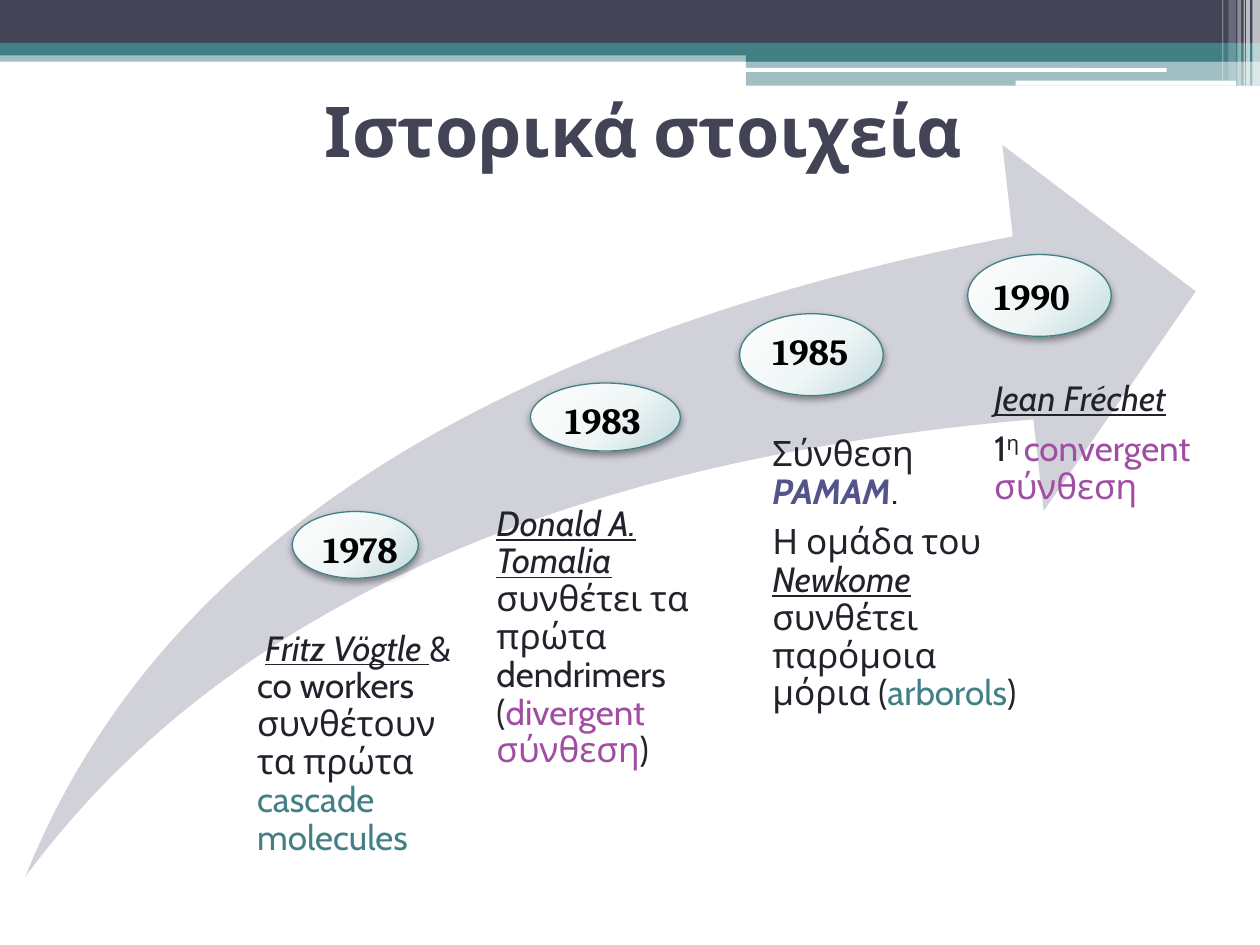
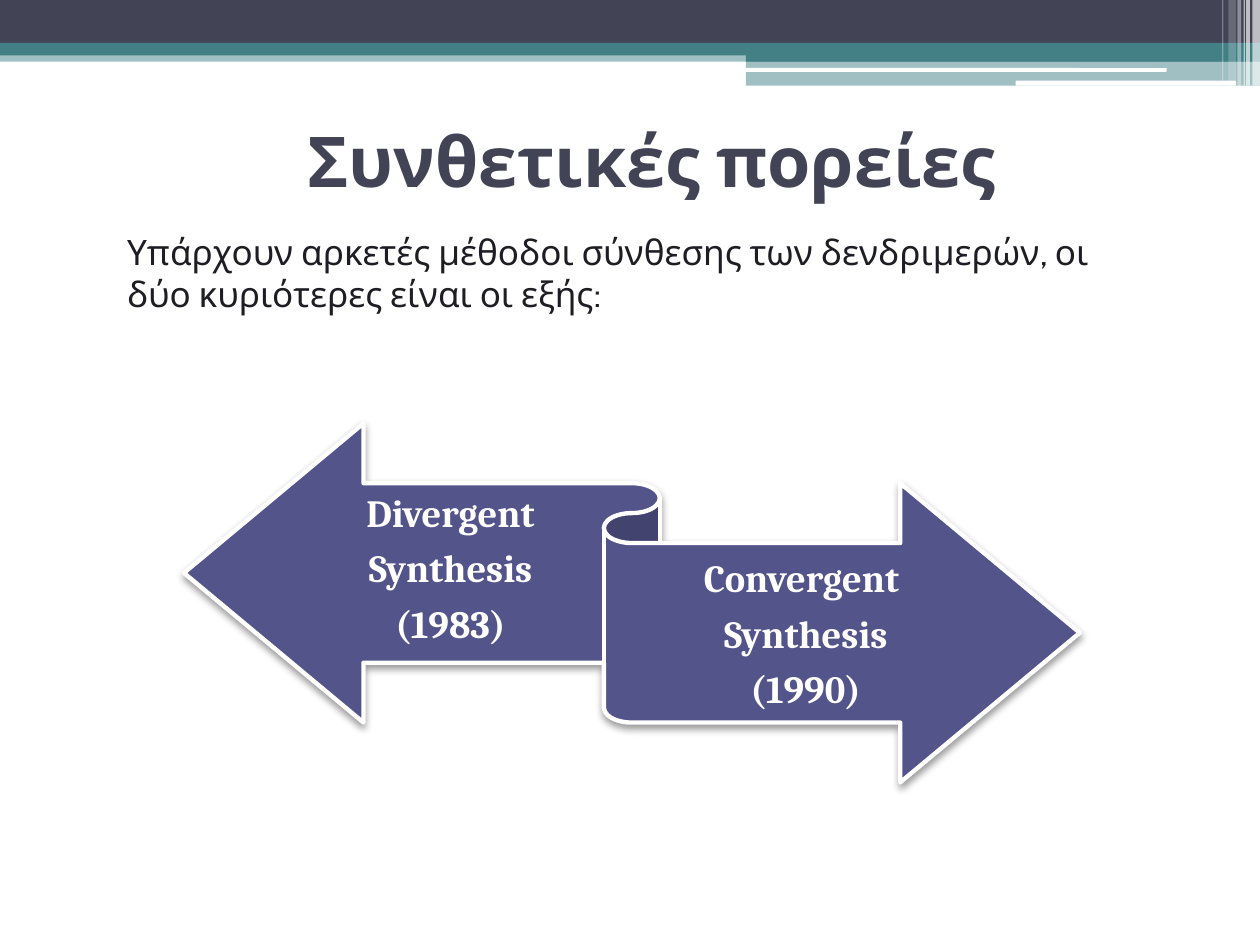
from lxml import etree
from pptx import Presentation, util as u
from pptx.dml.color import RGBColor
from pptx.enum import shapes, text
from pptx.oxml import parse_xml
from pptx.oxml.ns import qn

SLATE, TEAL, WHITE, BLACK = "424456", "438086", "FFFFFF", "000000"
INDIGO, VIOLET, INK, BODY_INK, LILAC = "53548A", "A04DA3", "21222B", "1F1D24", "D1D1DA"
BODY_FONT, LABEL_FONT = "Cabin", "Cambria"
WIDTH, HEIGHT = 10, 7.5
KIND = shapes.MSO_SHAPE
LEFT, CENTER = text.PP_ALIGN.LEFT, text.PP_ALIGN.CENTER

# Header bands: left, top, width, height, colour, opacity in percent
BANDS = [
    (0, 0.4, WIDTH, 0.09, TEAL, 50),
    (0, 0, WIDTH, 0.34, SLATE, 100),
    (0, 0.34, WIDTH, 0.1, TEAL, 100),
    (5.92, 0.39, 4.08, 0.1, TEAL, 100),
    (5.92, 0.48, 4.08, 0.2, TEAL, 50),
]
RULES = [(5.91, 0.54, 3.35, 0.03), (8.06, 0.64, 1.75, 0.04)]
# Vertical stripes in the corner: left, width, height, opacity
STRIPES = [
    (9.94, 0.06, 0.68, 65), (9.89, 0.03, 0.68, 65), (9.87, 0.01, 0.68, 60),
    (9.82, 0.03, 0.68, 40), (9.75, 0.06, 0.64, 20), (9.7, 0.01, 0.64, 30),
]

STYLES = {
    "plain": {},
    "name": {"italic": True, "underline": True},
    "teal": {"color": TEAL},
    "violet": {"color": VIOLET},
    "strong": {"color": INDIGO, "bold": True, "italic": True},
    "super": {"raised": True},
}

MILESTONES = [
    {"year": "1978", "oval": (2.32, 4.06, 1, 0.53), "box": (1.93, 4.22, 1.75, 2.54),
     "inset": 0.11, "align": CENTER, "gap": 34, "story": [
         [(" ", "plain"), ("Fritz Vögtle ", "name"), ("& co workers συνθέτουν τα πρώτα ", "plain"),
          ("cascade molecules", "teal")]]},
    {"year": "1983 ", "oval": (4.21, 3.04, 1.19, 0.54), "box": (3.74, 3.2, 1.95, 2.65),
     "inset": 0.2, "align": CENTER, "gap": 36, "story": [
         [("Donald A. Tomalia ", "name"), ("συνθέτει τα πρώτα dendrimers (", "plain"),
          ("divergent σύνθεση", "violet"), (")", "plain")]]},
    {"year": "1985", "oval": (5.87, 2.49, 1.14, 0.65), "box": (5.87, 2.65, 2.37, 3.88),
     "inset": 0.26, "align": LEFT, "gap": 36, "story": [
         [("Σύνθεση ", "plain"), ("PAMAM", "strong"), (".", "plain")],
         [("Η ομάδα του ", "plain"), ("Newkome ", "name"), ("συνθέτει παρόμοια μόρια (", "plain"),
          ("arborols", "teal"), (")", "plain")]]},
    {"year": "1990", "oval": (7.68, 2.02, 1.14, 0.65), "box": (7.54, 2.21, 1.95, 4.16),
     "inset": 0.35, "align": LEFT, "gap": 36, "story": [
         [("Jean Fréchet", "name")],
         [("1", "plain"), ("η ", "super"), ("convergent σύνθεση", "violet")]]},
]

ROUTES = [
    ((2.4, 3.83, 2.35, 1.39), ["Divergent", "Synthesis", "(1983)"]),
    ((5.01, 4.35, 2.77, 1.39), ["Convergent ", "Synthesis", "(1990)"]),
]
INTRO = "Υπάρχουν αρκετές μέθοδοι σύνθεσης των δενδριμερών, οι δύο κυριότερες είναι οι εξής:"

DRAWING_NS = 'xmlns:a="http://schemas.openxmlformats.org/drawingml/2006/main"'
OVAL_STOPS = [(0, "FEFEFE"), (55, "F0F6F6"), (100, "BFD9DD")]


def rgb(color):
    return RGBColor.from_string(color)


def inches(place):
    return [u.Inches(length) for length in place]


def add_figure(page, kind, place, color, opacity=100, line=None, line_width=1):
    figure = page.shapes.add_shape(kind, *inches(place))
    figure.shadow.inherit = False
    figure.fill.solid()
    figure.fill.fore_color.rgb = rgb(color)
    if opacity < 100:
        tint = figure.fill._xPr.find(qn("a:solidFill"))[0]
        etree.SubElement(tint, qn("a:alpha")).set("val", str(opacity * 1000))
    if line:
        figure.line.color.rgb = rgb(line)
        figure.line.width = u.Pt(line_width)
    else:
        figure.line.fill.background()
    return figure


def drop_shadow(figure):
    """Fill the empty effect list with a soft shadow straight below."""
    effects = figure._element.spPr.find(qn("a:effectLst"))
    effects.append(parse_xml(
        f'<a:outerShdw {DRAWING_NS} blurRad="{u.Pt(4.1)}" dist="{u.Pt(2)}" dir="5400000"'
        f' rotWithShape="0"><a:srgbClr val="{BLACK}"><a:alpha val="40000"/></a:srgbClr>'
        '</a:outerShdw>'))


def glaze(figure):
    """Replace the solid fill with a circular gradient lit from the upper left."""
    stops = "".join(f'<a:gs pos="{share * 1000}"><a:srgbClr val="{color}"/></a:gs>'
                    for share, color in OVAL_STOPS)
    properties = figure._element.spPr
    properties.replace(properties.find(qn("a:solidFill")), parse_xml(
        f'<a:gradFill {DRAWING_NS}><a:gsLst>{stops}</a:gsLst><a:path path="circle">'
        '<a:fillToRect l="-40000" t="-90000" r="140000" b="190000"/></a:path></a:gradFill>'))


def add_box(page, place, insets=(0.1, 0.05, 0.1, 0.05), anchor=text.MSO_ANCHOR.TOP):
    frame = page.shapes.add_textbox(*inches(place)).text_frame
    frame.word_wrap = True
    frame.vertical_anchor = anchor
    (frame.margin_left, frame.margin_top,
     frame.margin_right, frame.margin_bottom) = inches(insets)
    return frame


def write(frame, spans, size, color, font=BODY_FONT, bold=False, align=LEFT, spacing=None, after=0):
    """Add one paragraph of (words, style name) spans, reusing an empty first one."""
    para = frame.paragraphs[0]
    if para.runs:
        para = frame.add_paragraph()
    para.alignment = align
    para.space_after = u.Pt(after)
    if spacing:
        para.line_spacing = spacing
    para.font.name, para.font.size, para.font.bold = font, u.Pt(size), bold
    for words, style_name in spans:
        span, style = para.add_run(), STYLES[style_name]
        span.text = words
        # Fonts are repeated on runs so that every viewer applies them
        span.font.name, span.font.size = font, u.Pt(size)
        span.font.bold = style.get("bold", bold)
        span.font.italic = style.get("italic")
        span.font.underline = style.get("underline")
        span.font.color.rgb = rgb(style.get("color", color))
        if style.get("raised"):
            span._r.get_or_add_rPr().set("baseline", "30000")


def add_page(deck, title, title_top):
    page = deck.slides.add_slide(deck.slide_layouts[6])
    for *place, color, opacity in BANDS:
        add_figure(page, KIND.RECTANGLE, place, color, opacity)
    for place in RULES:
        add_figure(page, KIND.ROUNDED_RECTANGLE, place, WHITE)
    for left, width, height, opacity in STRIPES:
        add_figure(page, KIND.RECTANGLE, (left, 0, width, height), WHITE, opacity)
    frame = add_box(page, (0.67, title_top, 9, 1.17), anchor=text.MSO_ANCHOR.MIDDLE)
    write(frame, [(title, "plain")], 40, SLATE, bold=True, align=CENTER)
    return page


def add_history(deck):
    page = add_page(deck, "Ιστορικά στοιχεία ", 0.44)
    swoosh = add_figure(page, KIND.SWOOSH_ARROW, (0.2, 1.15, 9.29, 5.81), LILAC)
    swoosh.adjustments[0] = swoosh.adjustments[1] = 0.25
    for milestone in MILESTONES:
        oval = add_figure(page, KIND.OVAL, milestone["oval"], WHITE, line=TEAL, line_width=0.75)
        glaze(oval)
        drop_shadow(oval)
        frame = add_box(page, milestone["box"], (milestone["inset"], 0, 0, 0))
        write(frame, [(milestone["year"], "plain")], 21, BLACK, LABEL_FONT, True,
              milestone["align"], 0.9, milestone["gap"])
        for spans in milestone["story"]:
            write(frame, spans, 20, INK, spacing=0.9, after=7)


def add_routes(deck):
    page = add_page(deck, "Συνθετικές πορείες", 0.68)
    ribbon = add_figure(page, KIND.LEFT_RIGHT_RIBBON, (1.46, 3.36, 7.11, 2.85), INDIGO,
                        line=WHITE, line_width=2.5)
    drop_shadow(ribbon)
    for place, lines in ROUTES:
        frame = add_box(page, place, (0, 0.09, 0, 0.09), text.MSO_ANCHOR.MIDDLE)
        for line in lines:
            write(frame, [(line, "plain")], 22, WHITE, LABEL_FONT, True, CENTER, 0.9, 8)
    write(add_box(page, (0.91, 1.78, 8.11, 0.77)), [(INTRO, "plain")], 20, BODY_INK)


def main():
    deck = Presentation()
    deck.slide_width, deck.slide_height = inches((WIDTH, HEIGHT))
    add_history(deck)
    add_routes(deck)
    deck.save("out.pptx")


if __name__ == "__main__":
    main()
